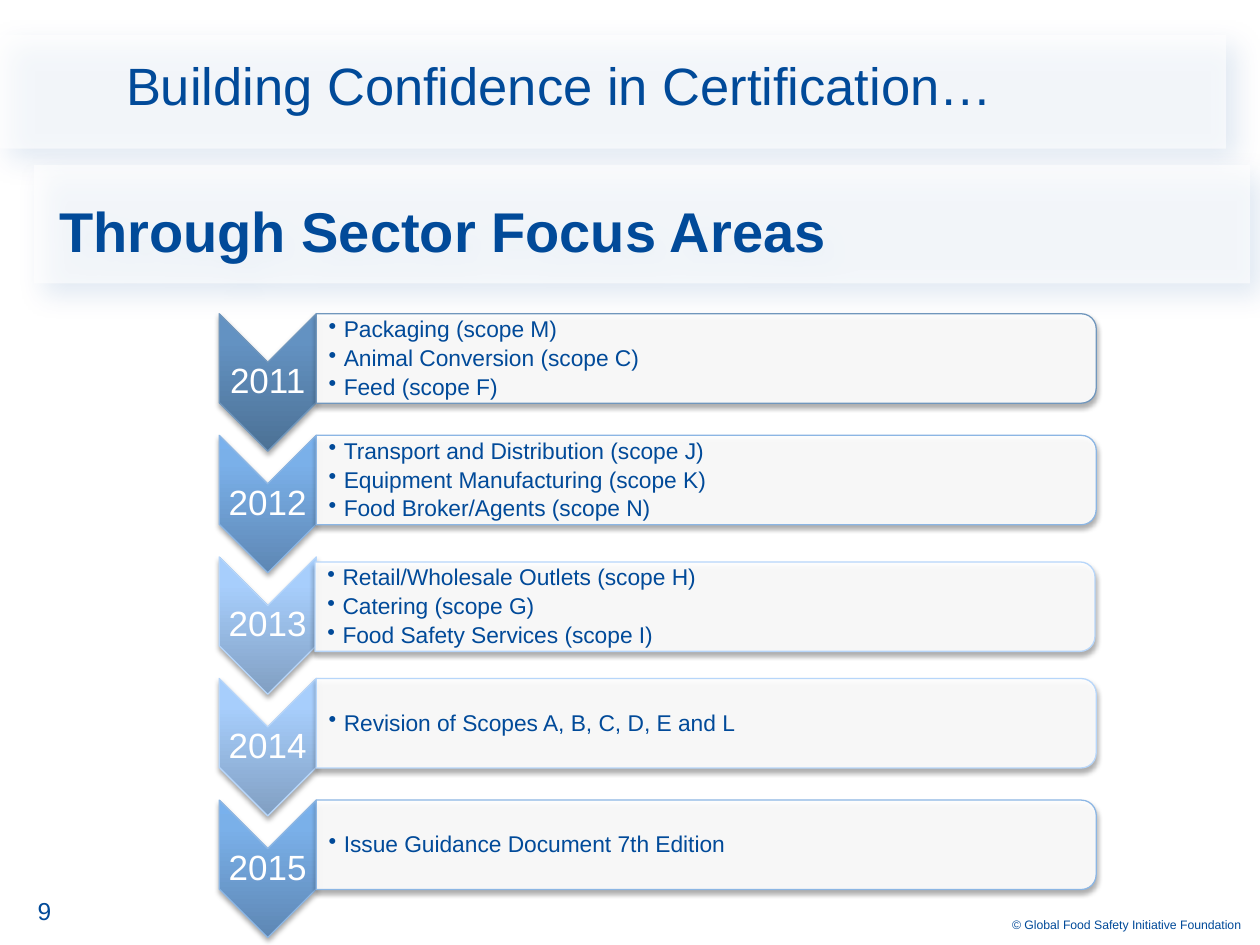
import pptx
import pptx.dml.color
import pptx.enum.shapes
import pptx.enum.text
import pptx.oxml
import pptx.util
from pptx.util import Inches

SHAPE = pptx.enum.shapes.MSO_SHAPE
ANCHOR = pptx.enum.text.MSO_ANCHOR
ALIGN = pptx.enum.text.PP_ALIGN
NS = 'xmlns:a="http://schemas.openxmlformats.org/drawingml/2006/main"'

BLUE = "014A99"
WHITE = "FFFFFF"
STEEL = ("4C7195", "6392C2", "6193C4", "7197BD")
SKY = ("5E87B4", "7AB0E9", "79B1ED", "8CB6E4")
PALE = ("819FC2", "A7CEFC", "A6CFFF", "B7D6FA")

ROWS = [
    ("2011", STEEL, ["Packaging (scope M)", "Animal Conversion (scope C)", "Feed (scope F)"]),
    ("2012", SKY, ["Transport and Distribution (scope J)", "Equipment Manufacturing (scope K)",
                   "Food Broker/Agents (scope N)"]),
    ("2013", PALE, ["Retail/Wholesale Outlets (scope H)", "Catering (scope G)",
                    "Food Safety Services (scope I)"]),
    ("2014", PALE, ["Revision of Scopes A, B, C, D, E and L"]),
    ("2015", SKY, ["Issue Guidance Document 7th Edition"]),
]
PANEL_SHIFT = {"2013": (-0.01, 0.04)}


def rgb(color):
    return pptx.dml.color.RGBColor.from_string(color)


def add_xml(parent, xml):
    parent.append(pptx.oxml.parse_xml(xml))


def set_shadow(sp, color, alpha, blur, dist, angle):
    add_xml(sp._element.spPr, f'''<a:effectLst {NS}>
        <a:outerShdw blurRad="{pptx.util.Pt(blur)}" dist="{pptx.util.Pt(dist)}"
            dir="{angle * 60000}" algn="ctr" rotWithShape="0">
        <a:srgbClr val="{color}"><a:alpha val="{alpha * 1000}"/></a:srgbClr>
        </a:outerShdw></a:effectLst>''')


def set_white_fill(sp, opacity):
    sp.fill.solid()
    sp.fill.fore_color.rgb = rgb(WHITE)
    clr = sp._element.spPr.find(".//{*}solidFill/{*}srgbClr")
    add_xml(clr, f'<a:alpha {NS} val="{opacity * 1000}"/>')


def set_gradient(sp, colors):
    stops = "".join(f'<a:gs pos="{pos}"><a:srgbClr val="{c}"/></a:gs>'
                    for pos, c in zip((0, 80000, 100000), colors))
    geometry = sp._element.spPr.find("{*}prstGeom")
    geometry.addnext(pptx.oxml.parse_xml(
        f'<a:gradFill {NS} rotWithShape="0"><a:gsLst>{stops}</a:gsLst>'
        '<a:lin ang="16200000" scaled="0"/></a:gradFill>'))


def set_line(sp, color):
    sp.line.color.rgb = rgb(color)
    sp.line.width = pptx.util.Pt(0.75)


def set_text(sp, lines, size, color=BLUE, align=ALIGN.LEFT, anchor=ANCHOR.MIDDLE,
             insets=(0, 0, 0, 0), spacing=None, after=0, bold=False, bullet=False):
    tf = sp.text_frame
    tf.word_wrap = True
    tf.auto_size = pptx.enum.text.MSO_AUTO_SIZE.NONE
    tf.vertical_anchor = anchor
    tf.margin_left, tf.margin_top, tf.margin_right, tf.margin_bottom = map(Inches, insets)
    tf.text = "\n".join(lines)
    for p in tf.paragraphs:
        p.alignment = align
        p.line_spacing = spacing
        p.space_after = pptx.util.Pt(after)
        if bullet:
            pPr = p._p.get_or_add_pPr()
            pPr.set("marL", str(Inches(0.12)))
            pPr.set("indent", str(-Inches(0.12)))
            add_xml(pPr, f'<a:buChar {NS} char="•"/>')
        p.font.name = "Arial"
        p.font.size = pptx.util.Pt(size)
        p.font.bold = bold
        p.font.color.rgb = rgb(color)


def add_text(s, box, lines, size, **style):
    sp = s.shapes.add_textbox(*map(Inches, box))
    set_text(sp, lines, size, **style)


def add_banner(s, box):
    sp = s.shapes.add_shape(SHAPE.RECTANGLE, *map(Inches, box))
    set_white_fill(sp, 60)
    sp.line.fill.background()
    set_shadow(sp, BLUE, 20, 16, 8, 45)
    return sp


def add_title(s, box, text):
    left, top, width, height = box
    banner = add_banner(s, (left, top, width + 0.03, height + 0.03))
    s.shapes._spTree.insert(2, banner._element)
    title = s.shapes.title
    title.left, title.top, title.width, title.height = map(Inches, box)
    set_text(title, [text], 30, insets=(1, 0, 0.2, 0), spacing=pptx.util.Pt(30))


def add_subtitle(s, box, text):
    set_text(add_banner(s, box), [text], 32, anchor=ANCHOR.TOP,
             insets=(0.2, 0.25, 0.1, 0.1), bold=True)


def add_turned_shape(s, kind, left, top, width, height, line):
    dx = (width - height) / 2
    sp = s.shapes.add_shape(kind, Inches(left + dx), Inches(top - dx),
                            Inches(height), Inches(width))
    sp.rotation = 90
    set_line(sp, line)
    set_shadow(sp, "000000", 35, 3.1, 1.8, 90)
    return sp


def add_year(s, left, top, year, colors):
    chevron = add_turned_shape(s, SHAPE.CHEVRON, left, top, 0.77, 1.09, colors[3])
    set_gradient(chevron, colors)
    add_text(s, (left, top + 0.38, 0.77, 0.33), [year], 20, color=WHITE,
             align=ALIGN.CENTER, insets=[0.01] * 4, spacing=0.9)


def add_panel(s, left, top, items, line):
    panel = add_turned_shape(s, SHAPE.ROUND_2_SAME_RECTANGLE, left, top, 6.19, 0.71, line)
    set_white_fill(panel, 90)
    add_text(s, (left, top + 0.04, 6.15, 0.64), items, 13, bullet=True,
             insets=(0.1, 0.01, 0.01, 0.01), spacing=0.9, after=2.4)


def add_timeline(s, left, top, pitch):
    for i, (year, colors, items) in enumerate(ROWS):
        y = top + i * pitch
        dx, dy = PANEL_SHIFT.get(year, (0, 0))
        add_year(s, left, y, year, colors)
        add_panel(s, left + 0.77 + dx, y + dy, items, colors[3])


def add_footer(s):
    add_text(s, (0.2, 7.06, 0.47, 0.44), ["9"], 14, anchor=ANCHOR.TOP,
             insets=(0.1, 0.05, 0.1, 0.05))
    add_text(s, (7.17, 7.27, 2.68, 0.13), ["© Global Food Safety Initiative Foundation"], 7,
             align=ALIGN.RIGHT)


def main():
    prs = pptx.Presentation()
    prs.slide_width, prs.slide_height = Inches(10), Inches(7.5)
    s = prs.slides.add_slide(prs.slide_layouts[5])
    add_title(s, (0, 0.28, 9.7, 0.87), "Building Confidence in Certification…")
    add_subtitle(s, (0.27, 1.31, 9.65, 0.94), "Through Sector Focus Areas")
    add_timeline(s, 1.74, 2.49, 0.965)
    add_footer(s)
    prs.save("out.pptx")


if __name__ == "__main__":
    main()
